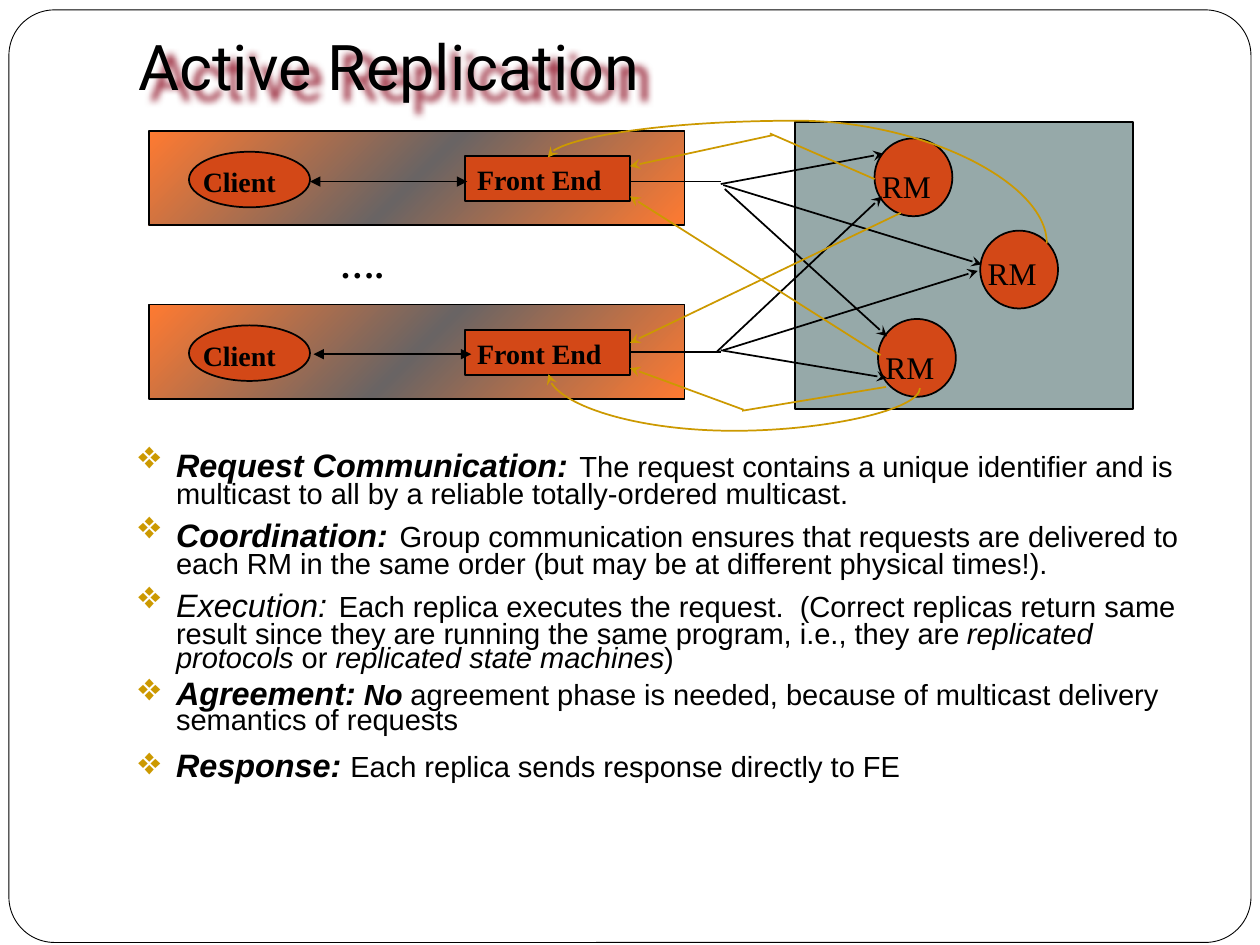
from copy import deepcopy
from lxml import etree
from pptx import Presentation
from pptx.dml.color import RGBColor
from pptx.enum.shapes import MSO_CONNECTOR, MSO_SHAPE
from pptx.enum.text import MSO_ANCHOR, PP_ALIGN
from pptx.oxml.ns import qn
from pptx.util import Cm, Pt

RECT, ROUND, OVAL = MSO_SHAPE.RECTANGLE, MSO_SHAPE.ROUNDED_RECTANGLE, MSO_SHAPE.OVAL
LINE, CURVE = MSO_CONNECTOR.STRAIGHT, MSO_CONNECTOR.CURVE
TOP, BASE, LEFT = MSO_ANCHOR.TOP, MSO_ANCHOR.BOTTOM, PP_ALIGN.LEFT
BLACK, WHITE, GOLD, RUST = "000000", "FFFFFF", "CC9900", "D34817"
SERIF = "Times New Roman"
hue = RGBColor.from_string

deck = Presentation()
deck.slide_width, deck.slide_height = Cm(25.4), Cm(19.05)
slide = deck.slides.add_slide(deck.slide_layouts[6])
shapes = slide.shapes


def box(kind, x, y, w, h, fill, width=1):
    shape = shapes.add_shape(kind, Cm(x), Cm(y), Cm(w), Cm(h))
    shape.shadow.inherit = False
    shape.fill.solid()
    shape.fill.fore_color.rgb = hue(fill)
    shape.line.color.rgb = hue(BLACK)
    shape.line.width = Pt(width)
    return shape


def write(shape, text, size, bold=False, font=SERIF):
    frame = shape.text_frame
    frame.text = text
    frame.word_wrap = True
    frame.vertical_anchor = TOP
    line = frame.paragraphs[0]
    line.alignment = LEFT
    face = line.runs[0].font
    face.size, face.bold, face.name = Pt(size), bold, font
    face.color.rgb = hue(BLACK)


border = box(ROUND, 0.18, 0.2, 25.04, 18.8, WHITE, 0.5)
border.adjustments[0] = 0.049
box(RECT, 16.03, 2.46, 6.81, 5.79, "96A9A9")

title = shapes.add_textbox(Cm(2.54), Cm(0.76), Cm(21.59), Cm(1.57))
write(title, "Active Replication", 36, font="Roboto")
title.text_frame.vertical_anchor = BASE
title.text_frame.margin_bottom = Cm(0.25)
glow = etree.SubElement(title._element.spPr, qn("a:effectLst"))
shade = etree.SubElement(glow, qn("a:outerShdw"), blurRad=str(Cm(0.15)),
                         dist=str(Cm(0.3)), dir="2400000", algn="tl", rotWithShape="0")
etree.SubElement(shade, qn("a:srgbClr"), val="9B2D3F")

for y in (2.64, 6.14):
    band = box(RECT, 3, y, 10.8, 1.9, RUST)
    band.fill.gradient()
    band.fill.gradient_angle = 315
    stops = band._element.find(".//" + qn("a:gsLst"))
    stops.insert(1, deepcopy(stops[0]))
    for stop, place, tone in zip(band.fill.gradient_stops, (0, 0.5, 1),
                                 ("FF7A31", "696464", "FF7A31")):
        stop.position = place
        stop.color.rgb = hue(tone)
    box(OVAL, 3.81, y + 0.42, 2.44, 1.12, RUST)
    label = shapes.add_textbox(Cm(3.84), Cm(y + 0.56), Cm(2.44), Cm(0.86))
    write(label, "Client", 16, True)
    write(box(RECT, 9.37, y + 0.51, 3.33, 0.91, RUST), "Front End", 16, True)

for x, y, drop in ((17.63, 2.79, 0.46), (19.76, 4.65, 0.35), (17.7, 6.43, 0.46)):
    box(OVAL, x, y, 1.57, 1.57, RUST)
    label = shapes.add_textbox(Cm(x - 0.1), Cm(y + drop), Cm(1.88), Cm(0.94))
    write(label, "RM", 18)

dots = shapes.add_textbox(Cm(6.6), Cm(4.78), Cm(3.66), Cm(1.02))
write(dots, "….", 20, True)

both = {"headEnd": "triangle", "tailEnd": "triangle"}
tip = {"tailEnd": "stealth"}
routes = [
    (6.25, 3.66, 9.42, 3.66, BLACK, both),
    (6.32, 7.14, 9.5, 7.14, BLACK, both),
    (12.73, 3.66, 14.53, 3.66, BLACK, {}),
    (14.53, 3.71, 17.81, 3.1, BLACK, tip),
    (14.58, 3.73, 19.79, 5.33, BLACK, tip),
    (14.61, 3.81, 17.88, 6.78, BLACK, tip),
    (12.73, 7.09, 14.53, 7.09, BLACK, {}),
    (14.45, 7.09, 17.78, 3.96, BLACK, tip),
    (14.53, 7.06, 17.88, 7.62, BLACK, tip),
    (14.58, 7.06, 19.71, 5.46, BLACK, tip),
    (17.63, 3.61, 15.52, 2.69, GOLD, {}),
    (15.6, 2.72, 12.7, 3.35, GOLD, tip),
    (17.75, 7.16, 12.7, 3.96, GOLD, tip),
    (17.86, 7.8, 14.96, 8.28, GOLD, {}),
    (14.99, 8.26, 12.7, 7.42, GOLD, tip),
    (18.16, 4.29, 12.7, 6.91, GOLD, tip),
    (15.21, -0.99, 16.94, 9.07, GOLD, tip, 90, "flipH", 142900),
    (14.66, 3.94, 14.94, 11.43, GOLD, tip, 270, "flipV", -307700),
]
for x, y, right, low, tone, ends, *turn in routes:
    link = shapes.add_connector(CURVE if turn else LINE, Cm(x), Cm(y), Cm(right), Cm(low))
    link.line.color.rgb = hue(tone)
    link.line.width = Pt(1)
    props = link._element.spPr
    for end, style in ends.items():
        etree.SubElement(props.find(qn("a:ln")), qn("a:" + end), type=style)
    etree.SubElement(props, qn("a:effectLst"))
    if turn:
        angle, flip, bend = turn
        frame = props.find(qn("a:xfrm"))
        frame.set("rot", str(angle * 60000))
        frame.set(flip, "1")
        etree.SubElement(props.find(".//" + qn("a:avLst")), qn("a:gd"),
                         name="adj1", fmla=f"val {bend}")

points = [
    [("Request Communication:", 18.5, "bi"), (" ", 24.1, "bi"),
     ("The request contains a unique identifier and is multicast to all by a "
      "reliable totally-ordered multicast.", 16.6, "")],
    [("Coordination:", 18.5, "bi"), (" ", 24.1, "bi"),
     ("Group communication ensures that requests are delivered to each RM in the "
      "same order (but may be at different physical times!).", 16.6, "")],
    [("Execution:", 18.5, "i"), (" ", 24.1, "i"),
     ("Each replica executes the request.  (Correct replicas return same result "
      "since they are running the same program, i.e., they are ", 16.6, ""),
     ("replicated protocols ", 16.6, "i"), ("or ", 16.6, ""),
     ("replicated state machines", 16.6, "i"), (")", 16.6, "")],
    [("Agreement:", 18.5, "bi"), (" No ", 16.6, "bi"),
     ("agreement phase is needed, because of multicast delivery semantics of "
      "requests", 16.6, "")],
    [("Response: ", 18.5, "bi"),
     ("Each replica sends response directly to FE", 16.6, "")],
]
body = shapes.add_textbox(Cm(2.54), Cm(8.93), Cm(21.59), Cm(7.77)).text_frame
body.word_wrap = True
body.text = "\n".join("" for point in points)
for line, point in zip(body.paragraphs, points):
    line.space_before = Pt(5.8)
    line.line_spacing = 1.0 if point is points[-1] else 0.7
    props = line._p.get_or_add_pPr()
    props.set("marL", str(Cm(0.76)))
    props.set("indent", str(Cm(-0.76)))
    tint = etree.SubElement(props, qn("a:buClr"))
    etree.SubElement(tint, qn("a:srgbClr"), val=GOLD)
    etree.SubElement(props, qn("a:buSzPct"), val="120000")
    etree.SubElement(props, qn("a:buChar"), char="❖")
    for text, size, style in point:
        run = line.add_run()
        run.text = text
        face = run.font
        face.name, face.size = "Arial", Pt(size)
        face.bold, face.italic = "b" in style, "i" in style
        face.color.rgb = hue(BLACK)

deck.save("out.pptx")
